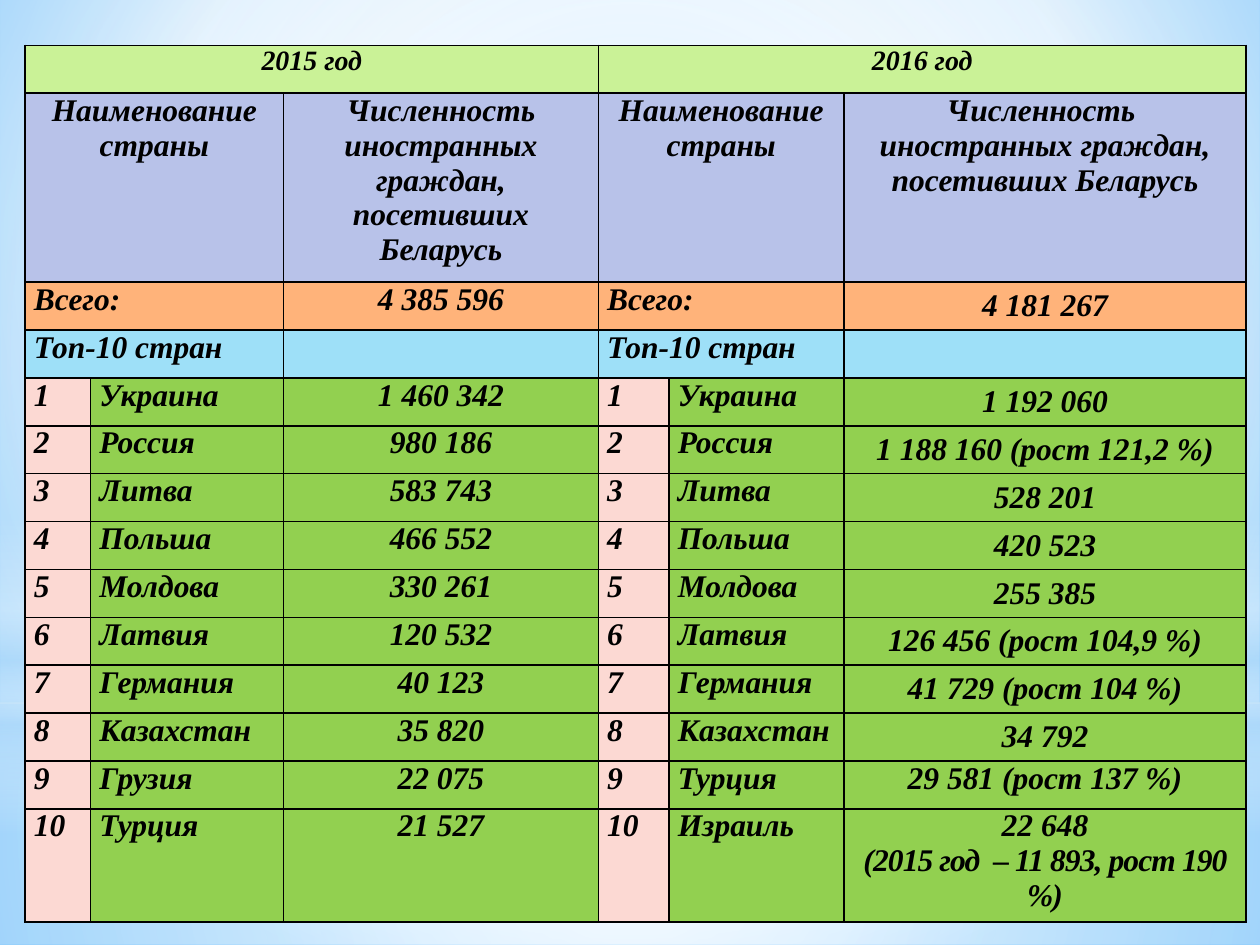
"""Build a slide with a table of foreign visitors to Belarus in 2015 and 2016."""
from lxml import etree
from pptx import Presentation
from pptx.dml.color import RGBColor
from pptx.enum.shapes import MSO_SHAPE
from pptx.enum.text import MSO_ANCHOR, PP_ALIGN
from pptx.oxml.ns import qn
from pptx.util import Inches, Pt

RECT, OVAL = MSO_SHAPE.RECTANGLE, MSO_SHAPE.OVAL
LEFT, CENTER = PP_ALIGN.LEFT, PP_ALIGN.CENTER
TOP, MIDDLE = MSO_ANCHOR.TOP, MSO_ANCHOR.MIDDLE

BACKGROUND = [(0, "9ED5FF", 100), (60, "FFFFFF", 100), (100, "5BB9FF", 100)]
BACKGROUND_FOCUS = (20, 10, 20, 60)
CENTRE_FOCUS = (50, 50, 50, 50)
GLOWS = [
    (RECT, 5.58, 1.92, CENTRE_FOCUS,
     [(0, "FFFFFF", 91), (37, "FFFFFF", 76), (100, "B4DCFA", 79)]),
    (RECT, 0, 5.58, CENTRE_FOCUS,
     [(0, "FFFFFF", 89), (48, "FFFFFF", 62), (100, "B4DCFA", 79)]),
    (RECT, 4.12, 2.5, None,
     [(0, "FFFFFF", 0), (29, "FFFFFF", 30), (45, "B4DCFA", 40),
      (55, "FFFFFF", 26), (65, "B4DCFA", 60), (100, "FFFFFF", 0)]),
    (OVAL, 1.75, 5.58, CENTRE_FOCUS, [(0, "FFFFFF", 100), (56, "FFFFFF", 0)]),
]

NAME = "Наименование страны"
HEAD_ROWS = [
    ["2015 год", "", "", "2016 год", "", ""],
    [NAME, "", "Численность иностранных граждан, посетивших Беларусь",
     NAME, "", "Численность \nиностранных граждан, посетивших Беларусь"],
    ["Всего:", "", "4 385 596", "Всего:", "", "4 181 267"],
    ["Топ-10 стран", "", "", "Топ-10 стран", "", ""],
]
COUNTRIES = [
    ("Украина", "1 460 342", "Украина", "1 192 060"),
    ("Россия", "980 186", "Россия", "1 188 160 (рост 121,2 %)"),
    ("Литва", "583 743", "Литва", "528 201"),
    ("Польша", "466 552", "Польша", "420 523"),
    ("Молдова", "330 261", "Молдова", "255 385"),
    ("Латвия", "120 532", "Латвия", "126 456 (рост 104,9 %)"),
    ("Германия", "40 123", "Германия", "41 729 (рост 104 %)"),
    ("Казахстан", "35 820", "Казахстан", "34 792"),
    ("Грузия", "22 075", "Турция", "29 581 (рост 137 %)"),
    ("Турция", "21 527", "Израиль", "22 648\n(2015 год  – 11 893, рост 190 %)"),
]
HEAD_FILLS = ["CAF297", "B8C2E9", "FFB37A", "9EE0F8"]
NUMBER_FILL, COUNTRY_FILL = "FCD9D3", "92D050"
COL_WIDTHS = [0.52, 1.53, 2.5, 0.56, 1.39, 3.19]
ROW_HEIGHTS = [0.38, 1.5] + [0.38] * 11 + [0.9]
MIDDLE_ROWS = {2, *range(4, 12)}
CELL_FORMAT = {"margin_left": Inches(0.07), "margin_right": Inches(0.07),
               "margin_top": 0, "margin_bottom": 0}
FONT_FORMAT = {"name": "Times New Roman", "bold": True, "italic": True}


def rgb(value):
    return RGBColor.from_string(value)


def add(parent, tag, **attrs):
    return etree.SubElement(parent, qn(tag), {k: str(v) for k, v in attrs.items()})


def apply(target, values):
    for name, value in values.items():
        setattr(target, name, value)


def set_gradient(solid, stops, focus):
    """Swap a solid fill element for a gradient."""
    grad = etree.Element(qn("a:gradFill"), rotWithShape="1")
    stop_list = add(grad, "a:gsLst")
    for pos, color, opacity in stops:
        stop = add(stop_list, "a:gs", pos=pos * 1000)
        clr = add(stop, "a:srgbClr", val=color)
        if opacity < 100:
            add(clr, "a:alpha", val=opacity * 1000)
    if focus:
        circle = add(grad, "a:path", path="circle")
        add(circle, "a:fillToRect", **{k: v * 1000 for k, v in zip("ltrb", focus)})
    else:
        add(grad, "a:lin", ang=90 * 60000, scaled=0)
    solid.getparent().replace(solid, grad)


def set_borders(cell):
    props = cell._tc.get_or_add_tcPr()
    for i, side in enumerate("LRTB"):
        line = etree.Element(qn(f"a:ln{side}"), w=str(Pt(1)))
        add(add(line, "a:solidFill"), "a:srgbClr", val="000000")
        props.insert(i, line)


def fill_cell(cell, text, color, size, align, anchor):
    apply(cell, CELL_FORMAT)
    cell.vertical_anchor = anchor
    cell.fill.solid()
    cell.fill.fore_color.rgb = rgb(color)
    set_borders(cell)
    cell.text = text
    for p in cell.text_frame.paragraphs:
        p.alignment = align
        for r in p.runs:
            apply(r.font, {**FONT_FORMAT, "size": Pt(size)})
            r.font.color.rgb = rgb("000000")
            if r.text.startswith("("):
                r.font._element.set("spc", "-50")


def add_backdrop(s):
    s.background.fill.solid()
    set_gradient(s.element.find(".//" + qn("p:bgPr")).find(qn("a:solidFill")),
                 BACKGROUND, BACKGROUND_FOCUS)
    for kind, top, height, focus, stops in GLOWS:
        sp = s.shapes.add_shape(kind, 0, Inches(top), Inches(10), Inches(height))
        sp.shadow.inherit = False
        sp.line.fill.background()
        sp.fill.solid()
        set_gradient(sp.element.spPr.find(qn("a:solidFill")), stops, focus)


def add_visitor_table(s):
    rows = HEAD_ROWS + [[str(n), a, b, str(n), c, d]
                        for n, (a, b, c, d) in enumerate(COUNTRIES, 1)]
    table = s.shapes.add_table(len(rows), len(COL_WIDTHS), Inches(0.2), Inches(0.36),
                               Inches(sum(COL_WIDTHS)), Inches(sum(ROW_HEIGHTS))).table
    for col, width in zip(table.columns, COL_WIDTHS):
        col.width = Inches(width)
    for row, height in zip(table.rows, ROW_HEIGHTS):
        row.height = Inches(height)
    for i, row in enumerate(rows):
        for j, text in enumerate(row):
            if i < len(HEAD_FILLS):
                color = HEAD_FILLS[i]
            else:
                color = COUNTRY_FILL if j % 3 else NUMBER_FILL
            fill_cell(table.cell(i, j), text, color, 18 if i else 16,
                      CENTER if i < 2 or j % 3 == 2 else LEFT,
                      MIDDLE if j == 5 and i in MIDDLE_ROWS else TOP)
    for i in range(len(HEAD_ROWS)):
        for j in (0, 3):
            table.cell(i, j).merge(table.cell(i, j + (1 if i else 2)))


def main():
    prs = Presentation()
    prs.slide_width, prs.slide_height = Inches(10), Inches(7.5)
    s = prs.slides.add_slide(prs.slide_layouts[6])
    add_backdrop(s)
    add_visitor_table(s)
    prs.save("out.pptx")


if __name__ == "__main__":
    main()
